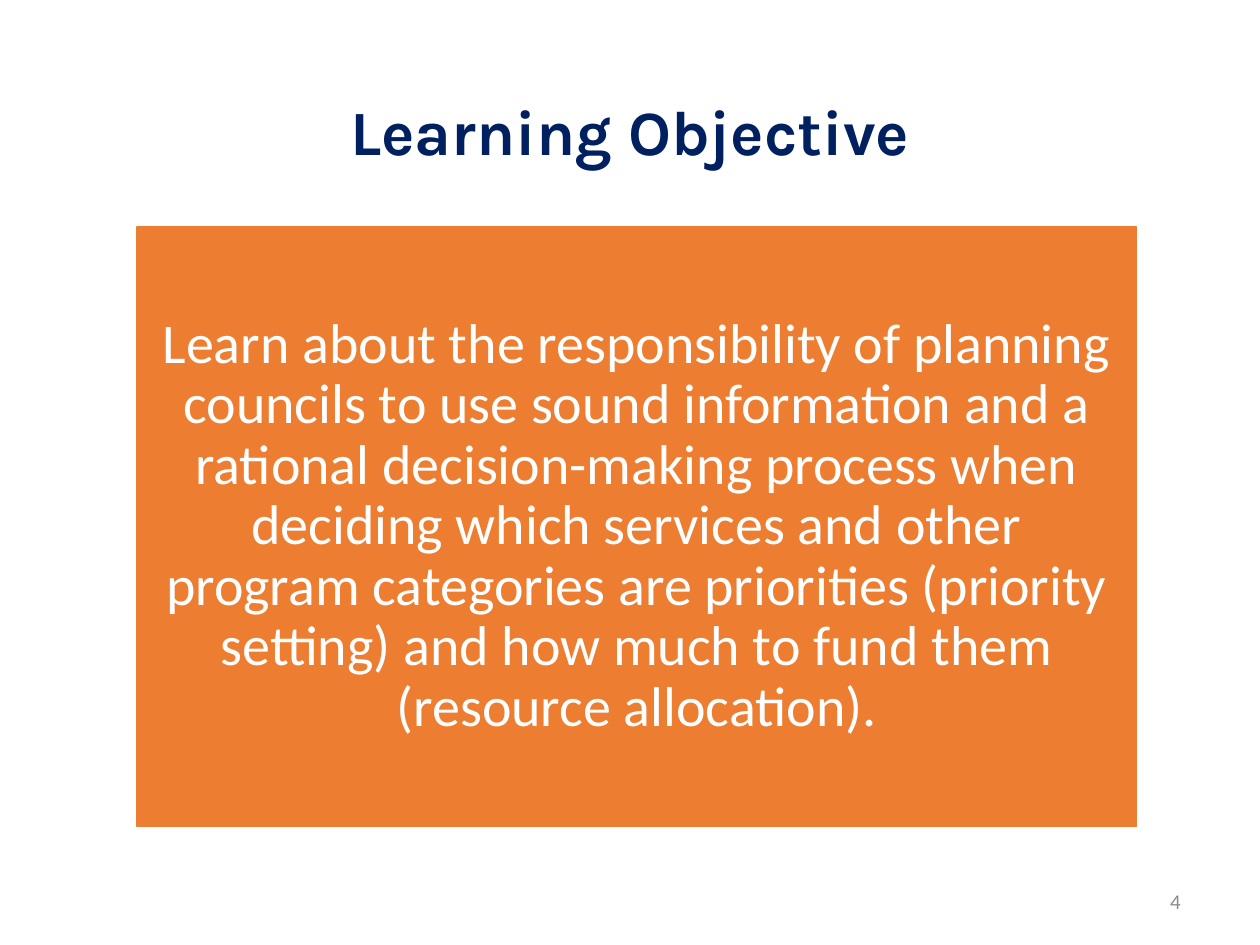
from pptx import Presentation
from pptx import util as u
from pptx.dml import color
from pptx.enum import shapes, text

COLORS = {"navy": "002060", "orange": "ED7D31", "white": "FFFFFF", "gray": "8C8C8C"}
OBJECTIVE = (
    "Learn about the responsibility of planning councils to use sound information "
    "and a rational decision-making process when deciding which services and other "
    "program categories are priorities (priority setting) and how much to fund them "
    "(resource allocation)."
)


def rgb(name):
    return color.RGBColor.from_string(COLORS[name])


def set_all(target, values):
    for name, value in values.items():
        setattr(target, name, value)


def write(shape, words, tint, font, paragraph, inset=None):
    frame = shape.text_frame
    set_all(frame, {
        "word_wrap": True,
        "auto_size": text.MSO_AUTO_SIZE.NONE,
        "vertical_anchor": text.MSO_ANCHOR.MIDDLE,
    })
    if inset is not None:
        sides = ("left", "top", "right", "bottom")
        set_all(frame, {f"margin_{side}": inset for side in sides})
    para = frame.paragraphs[0]
    set_all(para, paragraph)
    span = para.add_run()
    span.text = words
    set_all(span.font, font)
    span.font.color.rgb = rgb(tint)


def add_title(page, box):
    title = page.shapes.title
    set_all(title, dict(zip(("left", "top", "width", "height"), box)))
    write(title, "Learning Objective", "navy",
          {"name": "Karla", "size": u.Pt(36), "bold": True},
          {"alignment": text.PP_ALIGN.CENTER, "line_spacing": 0.9})


def add_objective(page, box):
    panel = page.shapes.add_shape(shapes.MSO_SHAPE.RECTANGLE, *box)
    panel.shadow.inherit = False
    panel.fill.solid()
    panel.fill.fore_color.rgb = rgb("orange")
    panel.line.color.rgb = rgb("orange")
    panel.line.width = u.Pt(1)
    write(panel, OBJECTIVE, "white",
          {"name": "Calibri", "size": u.Pt(32)},
          {"alignment": text.PP_ALIGN.CENTER, "line_spacing": 0.9},
          inset=u.Inches(0.13))


def add_page_number(page, box):
    number = page.shapes.add_textbox(*box)
    write(number, "4", "gray",
          {"name": "Calibri", "size": u.Pt(12)},
          {"alignment": text.PP_ALIGN.RIGHT, "space_after": u.Pt(6)})


def inches(*lengths):
    return [u.Inches(length) for length in lengths]


def main():
    deck = Presentation()
    deck.slide_width, deck.slide_height = inches(10, 7.5)
    page = deck.slides.add_slide(deck.slide_layouts.get_by_name("Title Only"))
    add_title(page, inches(0.32, 0.35, 9.36, 1.45))
    add_objective(page, inches(1.09, 1.8, 7.93, 4.76))
    add_page_number(page, inches(7.22, 6.95, 2.25, 0.4))
    deck.save("out.pptx")


if __name__ == "__main__":
    main()
